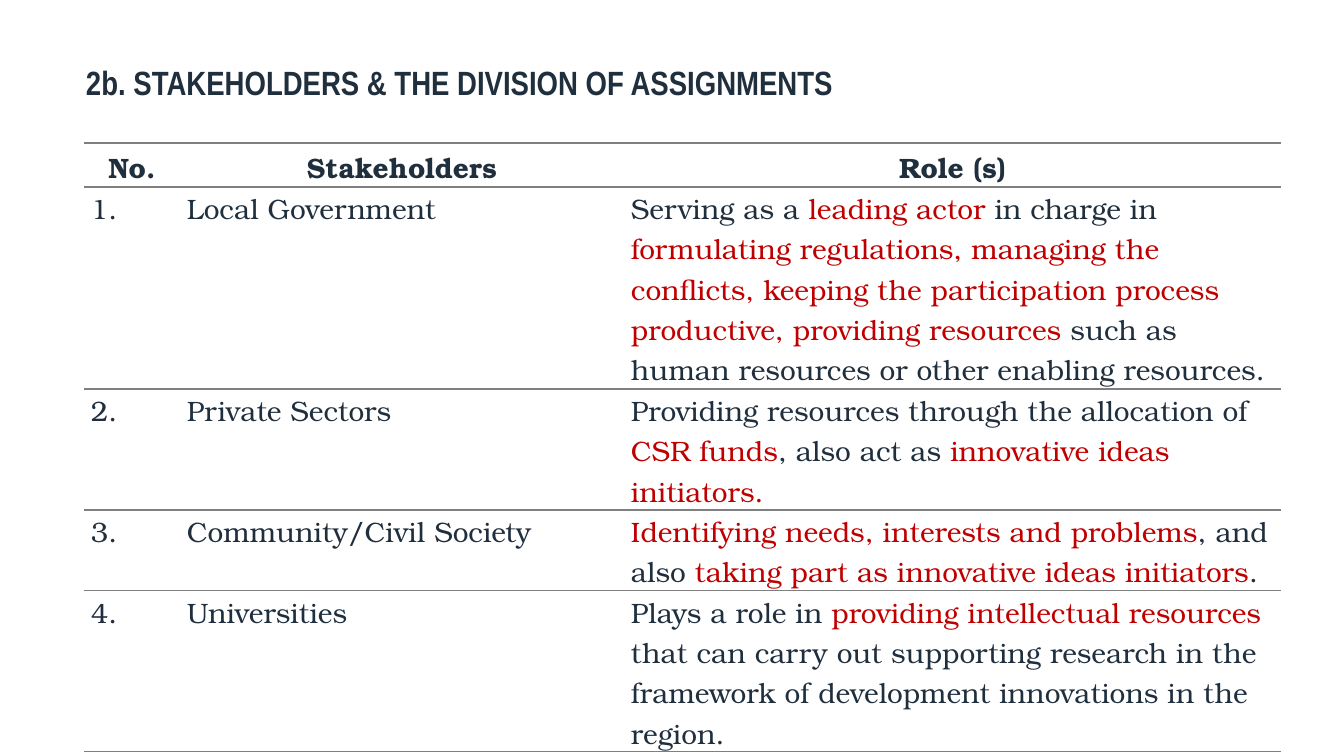
from dataclasses import dataclass

from lxml import etree
from pptx import Presentation
from pptx import util as u
from pptx.dml.color import RGBColor
from pptx.enum import text
from pptx.oxml import ns

# Content: each cell is a list of (words, colour role) runs
TITLE = "2b. STAKEHOLDERS & THE DIVISION OF ASSIGNMENTS"
HEADINGS = ("No.", "Stakeholders", "Role (s)")
STAKEHOLDERS = [
    ("Local Government", [
        ("Serving as a ", "ink"),
        ("leading actor ", "accent"),
        ("in charge in ", "ink"),
        ("formulating regulations, managing the conflicts, keeping the "
         "participation process productive, providing resources ", "accent"),
        ("such as human resources or other enabling resources.", "ink"),
    ]),
    ("Private Sectors", [
        ("Providing resources through the allocation of ", "ink"),
        ("CSR funds", "accent"),
        (", also act as ", "ink"),
        ("innovative ideas initiators.", "accent"),
    ]),
    ("Community/Civil Society", [
        ("Identifying needs, interests and problems", "accent"),
        (", and also ", "ink"),
        ("taking part as innovative ideas initiators", "accent"),
        (".", "ink"),
    ]),
    ("Universities", [
        ("Plays a role in ", "ink"),
        ("providing intellectual resources ", "accent"),
        ("that can carry out supporting research in the framework of "
         "development innovations in the region.", "ink"),
    ]),
]

# Lengths in px
SLIDE = (1344, 756)
TITLE_BOX = (73, 58, 1194, 53)
TITLE_INSETS = (13, 6)
TABLE_AT = (84, 143)
COLUMNS = (96, 444, 657)
ROWS = (44, 202, 121, 80, 161)
CELL_INSET = 7


@dataclass(frozen=True)
class Theme:
    ink: str = "202F3E"
    accent: str = "C00000"
    rule: str = "7F7F7F"
    title_font: str = "Arial Narrow"
    body_font: str = "TeX Gyre Bonum"
    title_size: int = 24
    body_size: int = 20
    rule_width: int = 1


THEME = Theme()


def px(length):
    return u.Emu(round(length * 914400 / 100.8))


def add_run(paragraph, words, font, size, colour, bold):
    run = paragraph.add_run()
    run.text = words
    run.font.name = font
    run.font.size = u.Pt(size)
    run.font.bold = bold
    run.font.color.rgb = RGBColor.from_string(colour)


def rule_cell(cell):
    """Rules above and below, none at the sides."""
    properties = cell._tc.get_or_add_tcPr()
    for side in ("lnL", "lnR", "lnT", "lnB"):
        line = etree.SubElement(properties, ns.qn(f"a:{side}"))
        if side in ("lnL", "lnR"):
            etree.SubElement(line, ns.qn("a:noFill"))
            continue
        line.set("w", str(u.Pt(THEME.rule_width)))
        fill = etree.SubElement(line, ns.qn("a:solidFill"))
        etree.SubElement(fill, ns.qn("a:srgbClr"), val=THEME.rule)
    cell.fill.background()


def fill_cell(cell, runs, heading):
    rule_cell(cell)
    cell.margin_left = cell.margin_right = px(CELL_INSET)
    cell.margin_top = cell.margin_bottom = 0
    cell.vertical_anchor = text.MSO_ANCHOR.MIDDLE if heading else text.MSO_ANCHOR.TOP
    paragraph = cell.text_frame.paragraphs[0]
    paragraph.alignment = text.PP_ALIGN.CENTER if heading else text.PP_ALIGN.LEFT
    paragraph.line_spacing = 1.07
    paragraph.space_after = u.Pt(8)
    for words, role in runs:
        add_run(paragraph, words, THEME.body_font, THEME.body_size,
                getattr(THEME, role), heading)


def add_title(slide):
    title = slide.shapes.title
    title.left, title.top, title.width, title.height = map(px, TITLE_BOX)
    frame = title.text_frame
    frame.word_wrap = True
    frame.auto_size = text.MSO_AUTO_SIZE.NONE
    frame.vertical_anchor = text.MSO_ANCHOR.MIDDLE
    frame.margin_left = frame.margin_right = px(TITLE_INSETS[0])
    frame.margin_top = frame.margin_bottom = px(TITLE_INSETS[1])
    paragraph = frame.paragraphs[0]
    paragraph.alignment = text.PP_ALIGN.LEFT
    paragraph.line_spacing = 0.9
    add_run(paragraph, TITLE, THEME.title_font, THEME.title_size, THEME.ink, True)


def add_roles(slide):
    grid = [[[(heading, "ink")] for heading in HEADINGS]]
    for number, (stakeholder, role) in enumerate(STAKEHOLDERS, 1):
        grid.append([[(f"{number}.", "ink")], [(stakeholder, "ink")], role])

    roles = slide.shapes.add_table(
        len(ROWS), len(COLUMNS), *map(px, (*TABLE_AT, sum(COLUMNS), sum(ROWS)))).table
    roles.first_row = roles.horz_banding = False
    for column, width in zip(roles.columns, COLUMNS):
        column.width = px(width)
    for row, height, contents in zip(roles.rows, ROWS, grid):
        row.height = px(height)
        for cell, runs in zip(row.cells, contents):
            fill_cell(cell, runs, heading=contents is grid[0])


def main():
    deck = Presentation()
    deck.slide_width, deck.slide_height = map(px, SLIDE)
    slide = deck.slides.add_slide(deck.slide_layouts[5])
    add_title(slide)
    add_roles(slide)
    deck.save("out.pptx")


if __name__ == "__main__":
    main()
